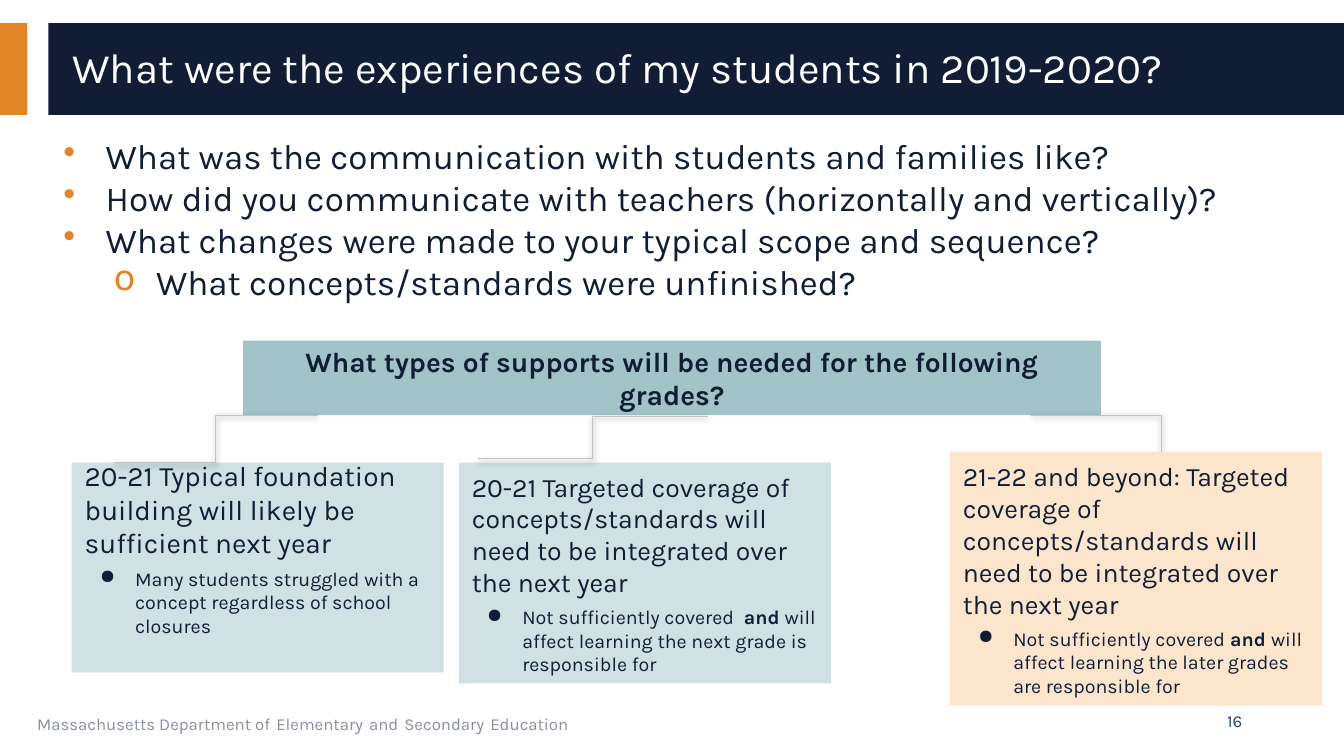
from lxml import etree
from pptx import Presentation
from pptx.dml.color import RGBColor
from pptx.enum.shapes import MSO_CONNECTOR, MSO_SHAPE
from pptx.enum.text import MSO_ANCHOR, PP_ALIGN
from pptx.oxml.ns import qn
from pptx.util import Pt

RECT = MSO_SHAPE.RECTANGLE
ELBOW = MSO_CONNECTOR.ELBOW
TOP, MIDDLE = MSO_ANCHOR.TOP, MSO_ANCHOR.MIDDLE
LEFT, CENTER, RIGHT = PP_ALIGN.LEFT, PP_ALIGN.CENTER, PP_ALIGN.RIGHT

SCALE = 9144
FONT = "Karla"
COLORS = {
    "navy": "101D34", "orange": "E38526", "white": "FFFFFF",
    "gray": "8A8FA0", "blue": "203B6A", "teal": "A2C4C9",
    "mist": "D0E0E3", "peach": "FCE5CD", "line": "C2C2C2",
    "black": "000000",
}


def px(value):
    return value * SCALE


def rgb(name):
    return RGBColor.from_string(COLORS[name])


def node(parent, tag, **attrs):
    return etree.SubElement(parent, qn(tag), {k: str(v) for k, v in attrs.items()})


def bar(slide, box, fill):
    shape = slide.shapes.add_shape(RECT, *map(px, box))
    shape.shadow.inherit = False
    shape.fill.solid()
    shape.fill.fore_color.rgb = rgb(fill)
    shape.line.fill.background()
    return shape


def area(slide, box):
    return slide.shapes.add_textbox(*map(px, box))


def setup(shape, anchor=TOP, insets=(10, 5, 10, 5)):
    frame = shape.text_frame
    frame.word_wrap = True
    frame.vertical_anchor = anchor
    (frame.margin_left, frame.margin_top,
     frame.margin_right, frame.margin_bottom) = map(px, insets)


def bullet(para, mark, color, left, hang):
    props = para._p.get_or_add_pPr()
    props.set("marL", str(px(left)))
    props.set("indent", str(px(-hang)))
    tint = node(props, "a:buClr")
    node(tint, "a:srgbClr", val=COLORS[color])
    node(props, "a:buChar", char=mark)


def text(shape, words, size=20, color="navy", bold=False, align=LEFT,
         level=0, mark=None, tint="orange", left=50, hang=42,
         before=0, lines=None):
    frame = shape.text_frame
    para = frame.paragraphs[0]
    if para.runs:
        para = frame.add_paragraph()
        para.space_before = Pt(before)
    para.level = level
    para.alignment = align
    if lines:
        para.line_spacing = lines
    if mark:
        bullet(para, mark, tint, left, hang)
    runs = [(words, {})] if isinstance(words, str) else words
    for part, style in runs:
        run = para.add_run()
        run.text = part
        font = run.font
        font.name = FONT
        font.size = Pt(style.get("size", size))
        font.bold = style.get("bold", bold)
        font.color.rgb = rgb(style.get("color", color))


def card(slide, box, fill, head, size, note, insets=(13, 13, 13, 13)):
    shape = bar(slide, box, fill)
    setup(shape, MIDDLE, insets)
    text(shape, head, size=size)
    text(shape, note, size=14, mark="●", tint="navy", hang=35, before=5)


def link(slide, ends):
    line = slide.shapes.add_connector(ELBOW, *map(px, ends))
    line.line.color.rgb = rgb("line")
    line.line.width = Pt(0.75)
    effect = node(line._element.spPr, "a:effectLst")
    shade = node(effect, "a:outerShdw", blurRad=Pt(4.5), dist=Pt(1.5),
                 dir=5400000, algn="t", rotWithShape=0)
    tone = node(shade, "a:srgbClr", val=COLORS["black"])
    node(tone, "a:alpha", val=50000)


def footer(slide):
    foot = area(slide, (27, 695, 844, 40))
    setup(foot)
    gap = (" ", {"size": 18, "color": "blue"})
    runs = [("Massachusetts Department of", {})]
    for word in ("Elementary", "and", "Secondary", "Education"):
        runs += [gap, (word, {})]
    text(foot, runs, size=12, color="gray")
    page = area(slide, (942, 695, 300, 40))
    setup(page, MIDDLE)
    text(page, "16", size=12, color="blue", align=RIGHT)


def header(slide):
    bar(slide, (0, 23, 27, 91), "orange")
    bar(slide, (48, 23, 1285, 91), "navy")
    title = area(slide, (62, 32, 1244, 74))
    setup(title, MIDDLE)
    text(title, "What were the experiences of my students in 2019-2020?",
         size=30, color="white", lines=0.9)


def body(slide):
    box = area(slide, (45, 129, 1261, 200))
    setup(box)
    for words in (
        "What was the communication with students and families like?",
        "How did you communicate with teachers (horizontally and vertically)?",
        "What changes were made to your typical scope and sequence?",
    ):
        text(box, words, size=25, mark="•")
    text(box, "What concepts/standards were unfinished?",
         size=25, level=1, mark="o", left=100)


def chart(slide):
    top = bar(slide, (241, 338, 851, 74), "teal")
    setup(top, MIDDLE, (13, 13, 13, 13))
    text(top, "What types of supports will be needed for the following grades?",
         bold=True, align=CENTER)
    card(slide, (71, 459, 369, 208), "mist",
         "20-21 Typical foundation building will likely be sufficient next year",
         20, "Many students struggled with a concept regardless of school closures",
         (13, 0, 13, 39))
    goal = ("Targeted coverage of concepts/standards will need to be "
            "integrated over the next year")
    strong = ("and ", {"bold": True})
    card(slide, (455, 459, 369, 219), "mist", "20-21 " + goal, 19,
         [("Not sufficiently covered  ", {}), strong,
          ("will affect learning the next grade is responsible for", {})])
    link(slide, (1023, 412, 1281, 478))
    link(slide, (474, 455, 702, 413))
    card(slide, (942, 448, 369, 252), "peach", "21-22 and beyond: " + goal, 19,
         [("Not sufficiently covered ", {}), strong,
          ("will affect learning the later grades are responsible for", {})])
    link(slide, (113, 459, 315, 412))


def main():
    deck = Presentation()
    deck.slide_width, deck.slide_height = px(1333), px(750)
    slide = deck.slides.add_slide(deck.slide_layouts[6])
    header(slide)
    body(slide)
    footer(slide)
    chart(slide)
    deck.save("out.pptx")


if __name__ == "__main__":
    main()
